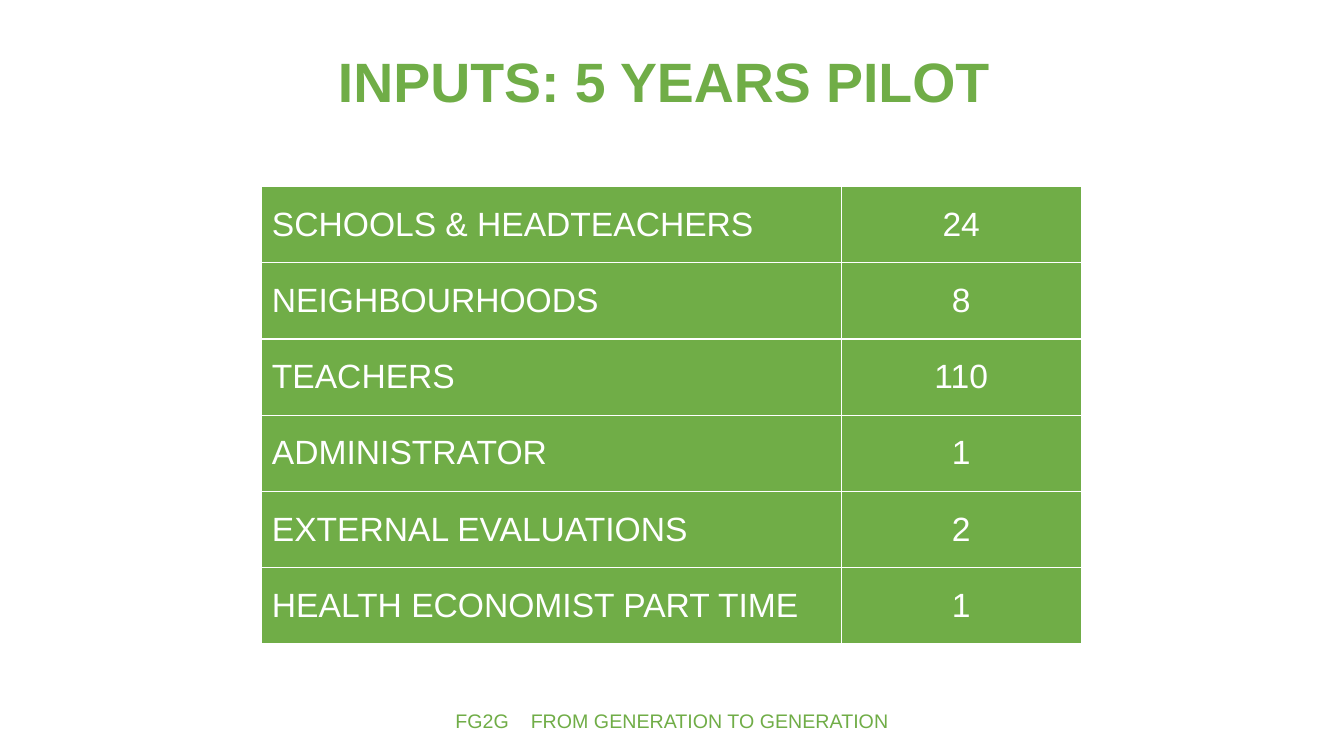
import pptx
import pptx.dml.color
import pptx.enum.text
import pptx.util
from lxml import etree
from pptx.oxml.ns import qn

Cm, Pt = pptx.util.Cm, pptx.util.Pt
ALIGN = pptx.enum.text.PP_ALIGN
ANCHOR = pptx.enum.text.MSO_ANCHOR

GREEN = pptx.dml.color.RGBColor(0x70, 0xAD, 0x47)
WHITE = pptx.dml.color.RGBColor(0xFF, 0xFF, 0xFF)

INPUTS = [
    ("SCHOOLS & HEADTEACHERS", "24"),
    ("NEIGHBOURHOODS", "8"),
    ("TEACHERS", "110"),
    ("ADMINISTRATOR", "1"),
    ("EXTERNAL EVALUATIONS", "2"),
    ("HEALTH ECONOMIST PART TIME", "1"),
]


class SlideBuilder:
    """Holds the style and the current slide."""

    font_name = "Arial"

    def __init__(self, slide):
        self.slide = slide

    def style(self, paragraph, size, color, align, bold=False):
        paragraph.alignment = align
        font = paragraph.font
        font.name, font.size, font.bold = self.font_name, Pt(size), bold
        font.color.rgb = color

    def title(self, text, left, top, width, height):
        heading = self.slide.shapes.title
        heading.left, heading.top = Cm(left), Cm(top)
        heading.width, heading.height = Cm(width), Cm(height)
        frame = heading.text_frame
        frame.text = text
        frame.auto_size = pptx.enum.text.MSO_AUTO_SIZE.NONE
        frame.vertical_anchor = ANCHOR.TOP
        # Insets set the line high in its box and slightly left of centre
        frame.margin_top, frame.margin_right = Cm(0.37), Cm(0.66)
        paragraph = frame.paragraphs[0]
        paragraph.line_spacing = 0.9
        self.style(paragraph, 39.6, GREEN, ALIGN.CENTER, bold=True)

    def footer(self, short_name, full_name, left, top, width, height):
        box = self.slide.shapes.add_textbox(Cm(left), Cm(top), Cm(width), Cm(height))
        frame = box.text_frame
        frame.word_wrap = True
        frame.vertical_anchor = ANCHOR.MIDDLE
        paragraph = frame.paragraphs[0]
        self.style(paragraph, 14, GREEN, ALIGN.CENTER)
        short_run, gap, full_run = (paragraph.add_run() for _ in range(3))
        short_run.text, gap.text, full_run.text = short_name, " ", full_name
        # Character spacing widens the gap between the two names
        gap._r.get_or_add_rPr().set("spc", "1170")

    def cell_borders(self, cell, color, width):
        properties = cell._tc.get_or_add_tcPr()
        for side in ("lnL", "lnR", "lnT", "lnB"):
            line = etree.SubElement(properties, qn(f"a:{side}"), w=str(Pt(width)))
            fill = etree.SubElement(line, qn("a:solidFill"))
            etree.SubElement(fill, qn("a:srgbClr"), val=str(color))

    def table(self, rows, left, top, column_widths, row_height):
        table = self.slide.shapes.add_table(
            len(rows), len(column_widths), Cm(left), Cm(top),
            Cm(sum(column_widths)), Cm(row_height * len(rows))).table
        table.first_row = table.horz_banding = False
        for column, width in zip(table.columns, column_widths):
            column.width = Cm(width)
        for table_row, texts in zip(table.rows, rows):
            table_row.height = Cm(row_height)
            for cell, text, align in zip(table_row.cells, texts, (ALIGN.LEFT, ALIGN.CENTER)):
                cell.text = text
                cell.vertical_anchor = ANCHOR.MIDDLE
                self.style(cell.text_frame.paragraphs[0], 24, WHITE, align)
                self.cell_borders(cell, WHITE, 1)
                cell.fill.solid()
                cell.fill.fore_color.rgb = GREEN


def main():
    presentation = pptx.Presentation()
    presentation.slide_width, presentation.slide_height = Cm(33.87), Cm(19.05)
    title_only = presentation.slide_layouts[5]
    builder = SlideBuilder(presentation.slides.add_slide(title_only))

    # Heading
    builder.title("INPUTS: 5 YEARS PILOT", 2.33, 1.01, 29.21, 3.68)

    # Pilot inputs and their quantities
    builder.table(INPUTS, 6.6, 4.7, column_widths=(14.6, 6.05), row_height=1.92)

    # Programme name
    builder.footer("FG2G", "FROM GENERATION TO GENERATION", 11.22, 17.65, 11.43, 1.01)

    presentation.save("out.pptx")


if __name__ == "__main__":
    main()
